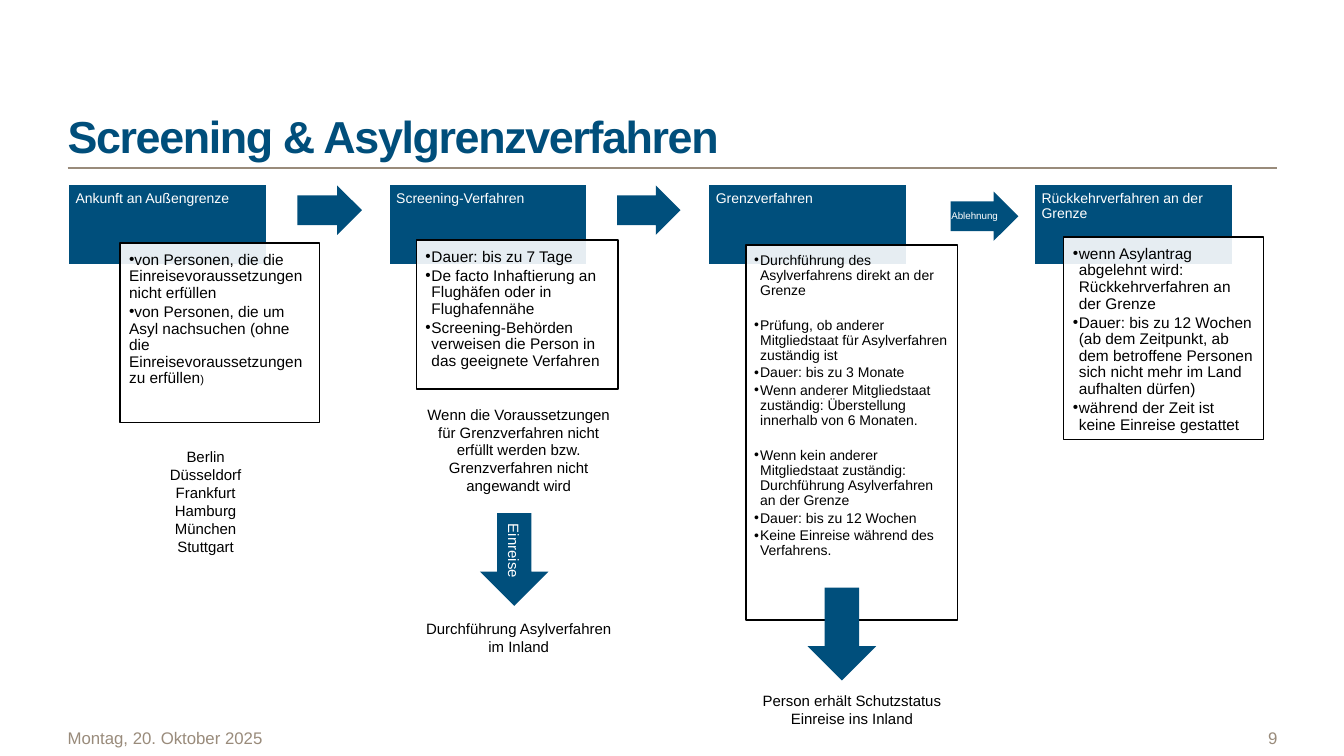
import lxml.etree
import pptx
import pptx.dml.color
import pptx.enum.shapes
import pptx.enum.text
import pptx.oxml.ns
import pptx.util

EMU_PER_PX = 9144  # 100 px to the inch
SHAPES = pptx.enum.shapes.MSO_SHAPE
ALIGN = pptx.enum.text.PP_ALIGN
ANCHOR = pptx.enum.text.MSO_ANCHOR


def px(length):
    return pptx.util.Emu(length * EMU_PER_PX)


def color(hex_string):
    return pptx.dml.color.RGBColor.from_string(hex_string)


def add_child(parent, tag, **attributes):
    child = lxml.etree.SubElement(parent, pptx.oxml.ns.qn(tag))
    for name, value in attributes.items():
        child.set(name, str(value))
    return child


def write_text(shape, paragraphs, font="Arial", size=10.7, hex_color="000000", bold=False,
               tracking=None, align=ALIGN.LEFT, anchor=ANCHOR.TOP, insets=(10, 5, 10, 5),
               wrap=True, line_spacing=None, space_after=0, gaps=None, bullet_indent=None):
    """Fill a shape with text.

    A paragraph is a string or a list of (text, size) runs. gaps maps a paragraph's
    index to its own space after. bullet_indent is the left margin and first-line indent.
    """
    frame = shape.text_frame
    frame.word_wrap = wrap
    frame.vertical_anchor = anchor
    frame.margin_left, frame.margin_top, frame.margin_right, frame.margin_bottom = map(px, insets)
    for index, content in enumerate(paragraphs):
        paragraph = frame.paragraphs[0] if index == 0 else frame.add_paragraph()
        paragraph.alignment = align
        paragraph.line_spacing = line_spacing
        paragraph.space_after = pptx.util.Pt((gaps or {}).get(index, space_after))
        if bullet_indent:
            properties = paragraph._p.get_or_add_pPr()
            properties.set("marL", str(px(bullet_indent[0])))
            properties.set("indent", str(px(bullet_indent[1])))
            add_child(properties, "a:buFont", typeface=font)
            add_child(properties, "a:buChar", char="•")
        runs = [(content, size)] if isinstance(content, str) else content
        for text, run_size in runs:
            run = paragraph.add_run()
            run.text = text
            run.font.name = font
            run.font.size = pptx.util.Pt(run_size)
            run.font.bold = bold
            run.font.color.rgb = color(hex_color)
            if tracking is not None:
                run._r.get_or_add_rPr().set("spc", str(tracking * 100))


class ProcessSlide:
    """Holds the style and the current slide."""

    blue = "004F7C"
    title_blue = "004E7B"
    taupe = "998B7B"
    white = "FFFFFF"
    black = "000000"

    def __init__(self, presentation):
        self.slide = presentation.slides.add_slide(presentation.slide_layouts[6])

    def shape(self, kind, box, fill, line=None, line_width=1.0):
        shape = self.slide.shapes.add_shape(kind, *map(px, box))
        shape.shadow.inherit = False
        shape.fill.solid()
        shape.fill.fore_color.rgb = color(fill)
        if line:
            shape.line.color.rgb = color(line)
            shape.line.width = pptx.util.Pt(line_width)
        else:
            shape.line.fill.background()
        return shape

    def text(self, box, *paragraphs, **text_format):
        write_text(self.slide.shapes.add_textbox(*map(px, box)), paragraphs, **text_format)

    def note(self, box, *paragraphs):
        self.text(box, *paragraphs, align=ALIGN.CENTER)

    def title(self, text):
        self.text((67, 58, 1200, 108), text, size=32, hex_color=self.title_blue, bold=True,
                  tracking=-1, anchor=ANCHOR.BOTTOM, insets=(0, 5, 10, 5))

    def rule(self, left, right, top):
        rule = self.slide.shapes.add_connector(pptx.enum.shapes.MSO_CONNECTOR.STRAIGHT,
                                               px(left), px(top), px(right), px(top))
        rule.line.color.rgb = color(self.taupe)
        rule.line.width = pptx.util.Pt(1.5)
        add_child(rule._element.spPr, "a:effectLst")

    def footer(self, box, text, align):
        self.text(box, text, size=12, hex_color=self.taupe, align=align,
                  anchor=ANCHOR.MIDDLE, insets=(0, 5, 0, 5), wrap=False)

    def step_header(self, left, text):
        header = self.shape(SHAPES.RECTANGLE, (left, 182, 198, 81), self.blue, self.white, 2.08)
        write_text(header, [text], size=10, hex_color=self.white, insets=(8, 8, 8, 4),
                   line_spacing=0.9)

    def step_card(self, box, points, size=11, inset=9, bullet_indent=(6, -6), gaps=None):
        card = self.shape(SHAPES.RECTANGLE, box, self.white, self.black)
        solid_color = card.fill._xPr.find(".//" + pptx.oxml.ns.qn("a:srgbClr"))
        add_child(solid_color, "a:alpha", val=90000)
        write_text(card, points, size=size, insets=(inset,) * 4, line_spacing=0.9,
                   space_after=1.6, gaps=gaps, bullet_indent=bullet_indent)

    def next_arrow(self, box, label=None):
        arrow = self.shape(SHAPES.RIGHT_ARROW, box, self.blue)
        arrow.adjustments[0] = 0.6
        if label:
            write_text(arrow, [label], size=7, hex_color=self.white, align=ALIGN.CENTER,
                       anchor=ANCHOR.MIDDLE, insets=(0, 0, 5, 0), line_spacing=0.9)

    def entry_arrow(self, left, top, label=None):
        arrow = self.shape(SHAPES.DOWN_ARROW, (left, top, 68, 92), self.blue)
        if label:
            write_text(arrow, [label], hex_color=self.white, align=ALIGN.CENTER,
                       anchor=ANCHOR.MIDDLE)
            arrow.text_frame._txBody.bodyPr.set("vert", "vert")


def main():
    presentation = pptx.Presentation()
    presentation.slide_width = px(1333)
    presentation.slide_height = px(750)
    slide = ProcessSlide(presentation)

    slide.rule(67, 1267, 167)
    slide.title("Screening & Asylgrenzverfahren")
    slide.footer((67, 714, 422, 36), "Montag, 20. Oktober 2025", ALIGN.LEFT)
    slide.footer((1111, 714, 156, 36), "9", ALIGN.RIGHT)

    slide.step_header(67, "Ankunft an Außengrenze")
    slide.step_card((119, 241, 198, 178), [
        "von Personen, die die Einreisevoraussetzungen nicht erfüllen",
        [("von Personen, die um Asyl nachsuchen (ohne die Einreisevoraussetzungen zu erfüllen", 11),
         (")", 8)],
    ], bullet_indent=(0, -6))
    slide.next_arrow((295, 184, 64, 49))

    slide.step_header(385, "Screening-Verfahren")
    slide.step_card((413, 238, 200, 148), [
        "Dauer: bis zu 7 Tage",
        "De facto Inhaftierung an Flughäfen oder in Flughafennähe",
        "Screening-Behörden verweisen die Person in das geeignete Verfahren",
    ])
    slide.next_arrow((612, 184, 63, 49))

    slide.step_header(702, "Grenzverfahren")
    slide.step_card((740, 243, 210, 372), [
        "Durchführung des Asylverfahrens direkt an der Grenze",
        "Prüfung, ob anderer Mitgliedstaat für Asylverfahren zuständig ist",
        "Dauer: bis zu 3 Monate",
        "Wenn anderer Mitgliedstaat zuständig: Überstellung innerhalb von 6 Monaten.",
        "Wenn kein anderer Mitgliedstaat zuständig: Durchführung Asylverfahren an der Grenze",
        "Dauer: bis zu 12 Wochen",
        "Keine Einreise während des Verfahrens.",
    ], size=10, inset=8, gaps={0: 14, 3: 14})
    slide.next_arrow((943, 190, 67, 49), "Ablehnung")

    slide.step_header(1025, "Rückkehrverfahren an der Grenze")
    slide.step_card((1055, 235, 198, 201), [
        "wenn Asylantrag abgelehnt wird: Rückkehrverfahren an der Grenze",
        "Dauer: bis zu 12 Wochen (ab dem Zeitpunkt, ab dem betroffene Personen "
        "sich nicht mehr im Land aufhalten dürfen)",
        "während der Zeit ist keine Einreise gestattet",
    ])

    slide.note((126, 439, 156, 158),
               "Berlin", "Düsseldorf", "Frankfurt", "Hamburg", "München", "Stuttgart")
    slide.note((699, 681, 292, 46), "Person erhält Schutzstatus", "Einreise ins Inland")
    slide.note((409, 397, 211, 100), "Wenn die Voraussetzungen für Grenzverfahren nicht "
               "erfüllt werden bzw. Grenzverfahren nicht angewandt wird")
    slide.note((409, 610, 211, 49), "Durchführung Asylverfahren im Inland")
    slide.entry_arrow(476, 509, "Einreise")
    slide.entry_arrow(801, 583)

    presentation.save("out.pptx")


if __name__ == "__main__":
    main()
